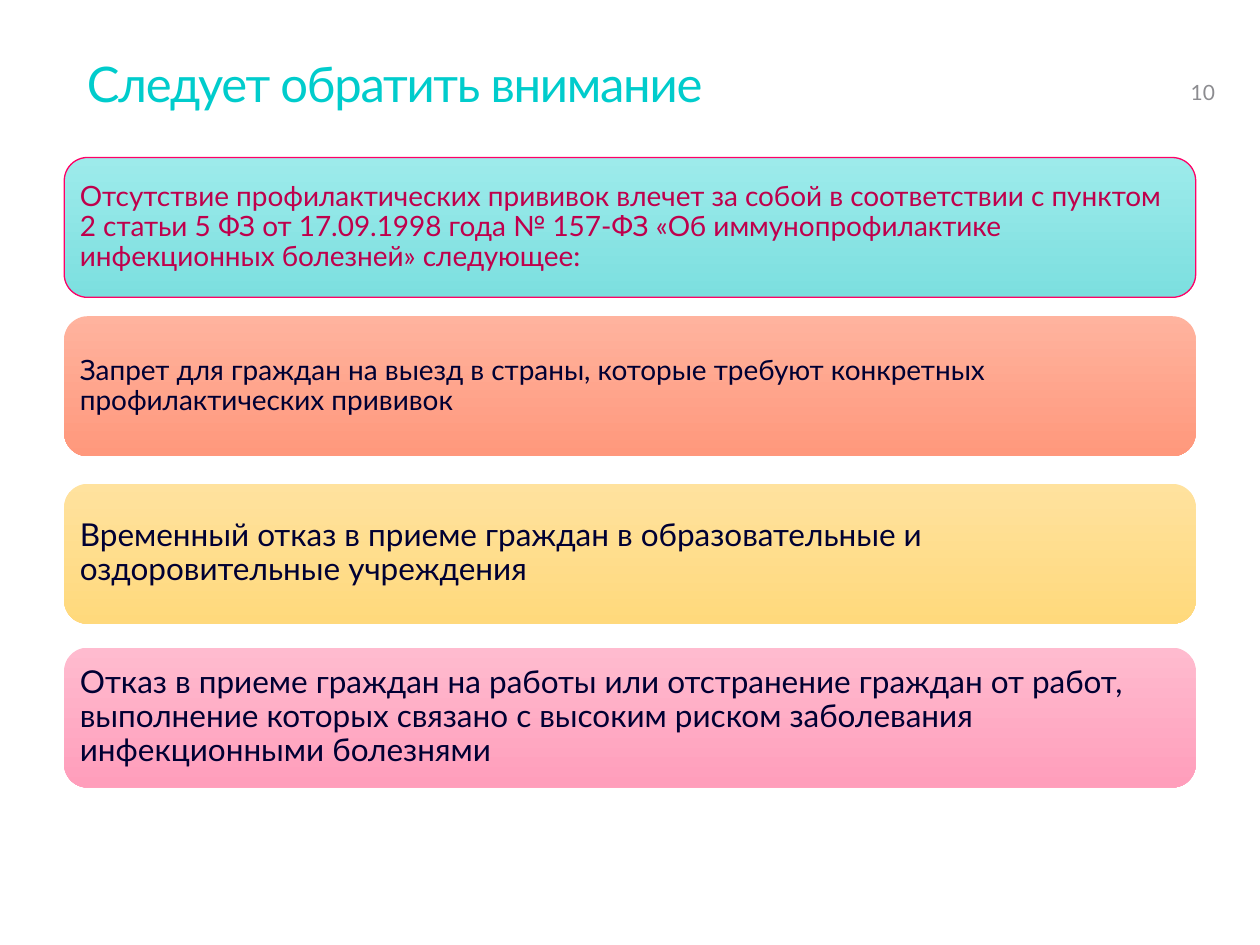
from dataclasses import dataclass

from pptx import Presentation
from pptx.dml.color import RGBColor
from pptx.enum import shapes, text
from pptx.util import Inches, Pt


@dataclass(frozen=True)
class Theme:
    font: str = "Lato"
    title: str = "00CCCC"
    number: str = "8C8C90"
    body: str = "000033"
    accent: str = "BF004C"
    border: str = "FF0066"
    teal: tuple = ("9DEBEB", "7CDFDF")
    coral: tuple = ("FFB39E", "FF987C")
    yellow: tuple = ("FFE29E", "FFD97C")
    pink: tuple = ("FFBBCF", "FF9EBB")
    title_size: int = 28
    large_size: int = 18
    body_size: int = 16
    number_size: int = 12


THEME = Theme()
CARD_LEFT, CARD_WIDTH, CARD_HEIGHT = 0.51, 8.98, 1.11


def set_frame(frame, anchor, side, edge):
    frame.word_wrap = True
    frame.vertical_anchor = anchor
    frame.margin_left = frame.margin_right = Inches(side)
    frame.margin_top = frame.margin_bottom = Inches(edge)


def add_span(para, words, size, color):
    para.alignment = text.PP_ALIGN.LEFT
    span = para.add_run()
    span.text = words
    span.font.name = THEME.font
    span.font.size = Pt(size)
    span.font.color.rgb = RGBColor.from_string(color)
    return span


def add_title(page, words):
    box = page.shapes.add_textbox(Inches(0.69), Inches(0.4), Inches(8.62), Inches(1.03))
    set_frame(box.text_frame, text.MSO_ANCHOR.TOP, 0, 0.05)
    para = box.text_frame.paragraphs[0]
    para.line_spacing = Pt(32)
    span = add_span(para, words, THEME.title_size, THEME.title)
    span.font._element.set("spc", "-70")


def add_page_number(page, words):
    box = page.shapes.add_textbox(Inches(9.45), Inches(0.4), Inches(0.38), Inches(0.47))
    set_frame(box.text_frame, text.MSO_ANCHOR.BOTTOM, 0, 0.04)
    add_span(box.text_frame.paragraphs[0], words, THEME.number_size, THEME.number)


def add_card(page, top, gradient, words, size, color=THEME.body, border=None):
    card = page.shapes.add_shape(
        shapes.MSO_SHAPE.ROUNDED_RECTANGLE,
        Inches(CARD_LEFT), Inches(top), Inches(CARD_WIDTH), Inches(CARD_HEIGHT),
    )
    card.shadow.inherit = False
    card.fill.gradient()
    card.fill.gradient_angle = 270
    for stop, shade, position in zip(card.fill.gradient_stops, gradient, (0, 1)):
        stop.color.rgb = RGBColor.from_string(shade)
        stop.position = position
    if border:
        card.line.color.rgb = RGBColor.from_string(border)
        card.line.width = Pt(0.75)
    else:
        card.line.fill.background()
    set_frame(card.text_frame, text.MSO_ANCHOR.MIDDLE, 0.07, 0.07)
    para = card.text_frame.paragraphs[0]
    para.line_spacing = 0.9
    add_span(para, words, size, color)


def main():
    deck = Presentation()
    deck.slide_width, deck.slide_height = Inches(10), Inches(7.5)
    page = deck.slides.add_slide(deck.slide_layouts[6])
    add_title(page, "Следует обратить внимание")
    add_page_number(page, "10")
    add_card(
        page, 1.25, THEME.teal,
        "Отсутствие профилактических прививок влечет за собой в соответствии "
        "с пунктом 2 статьи 5 ФЗ от 17.09.1998 года № 157-ФЗ "
        "«Об иммунопрофилактике инфекционных болезней» следующее:",
        THEME.body_size, THEME.accent, THEME.border,
    )
    add_card(
        page, 2.51, THEME.coral,
        "Запрет для граждан на выезд в страны, которые требуют конкретных "
        "профилактических прививок",
        THEME.body_size,
    )
    add_card(
        page, 3.84, THEME.yellow,
        "Временный отказ в приеме граждан в образовательные и "
        "оздоровительные учреждения",
        THEME.large_size,
    )
    add_card(
        page, 5.14, THEME.pink,
        "Отказ в приеме граждан на работы или отстранение граждан от работ, "
        "выполнение которых связано с высоким риском заболевания "
        "инфекционными болезнями",
        THEME.large_size,
    )
    deck.save("out.pptx")


if __name__ == "__main__":
    main()
